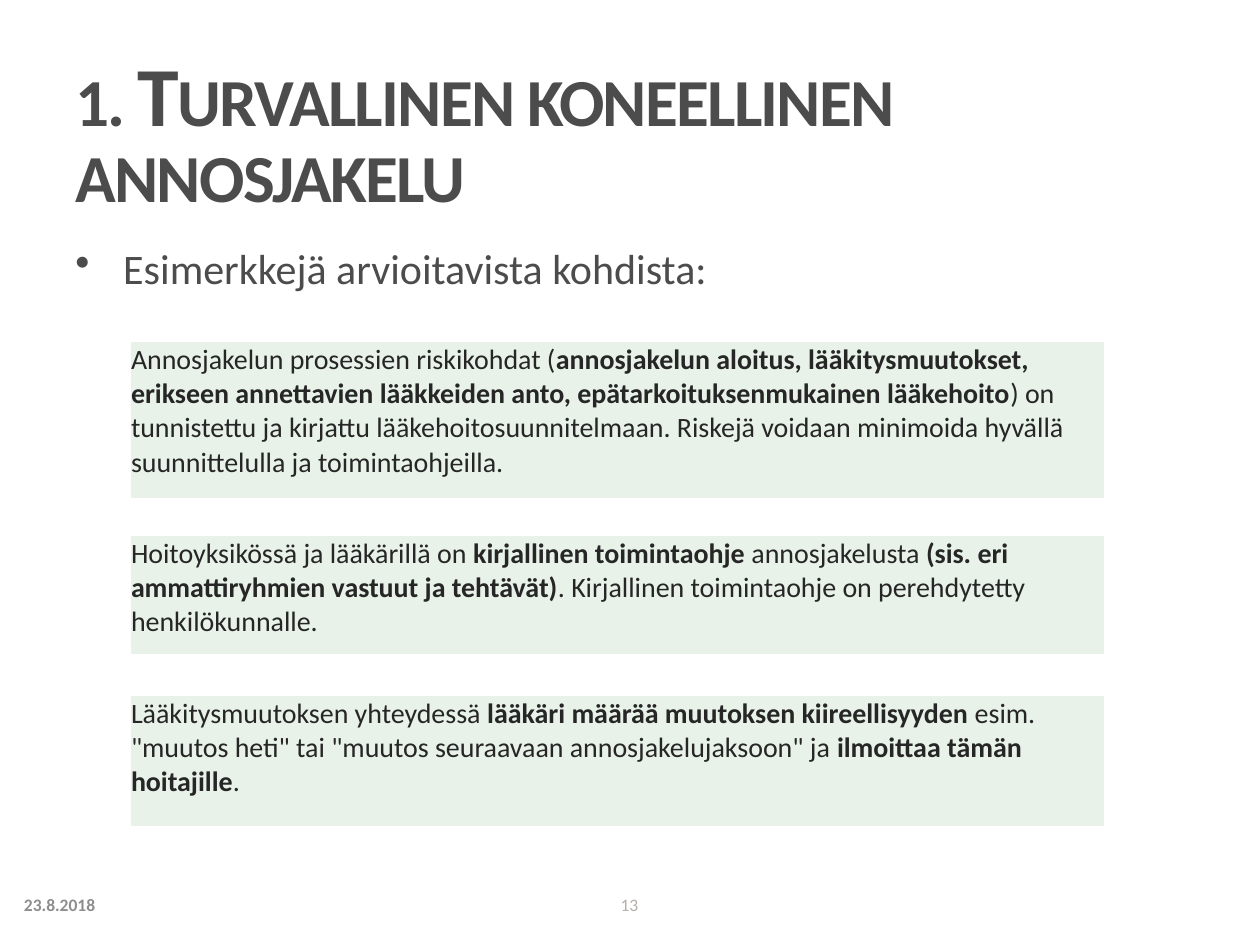
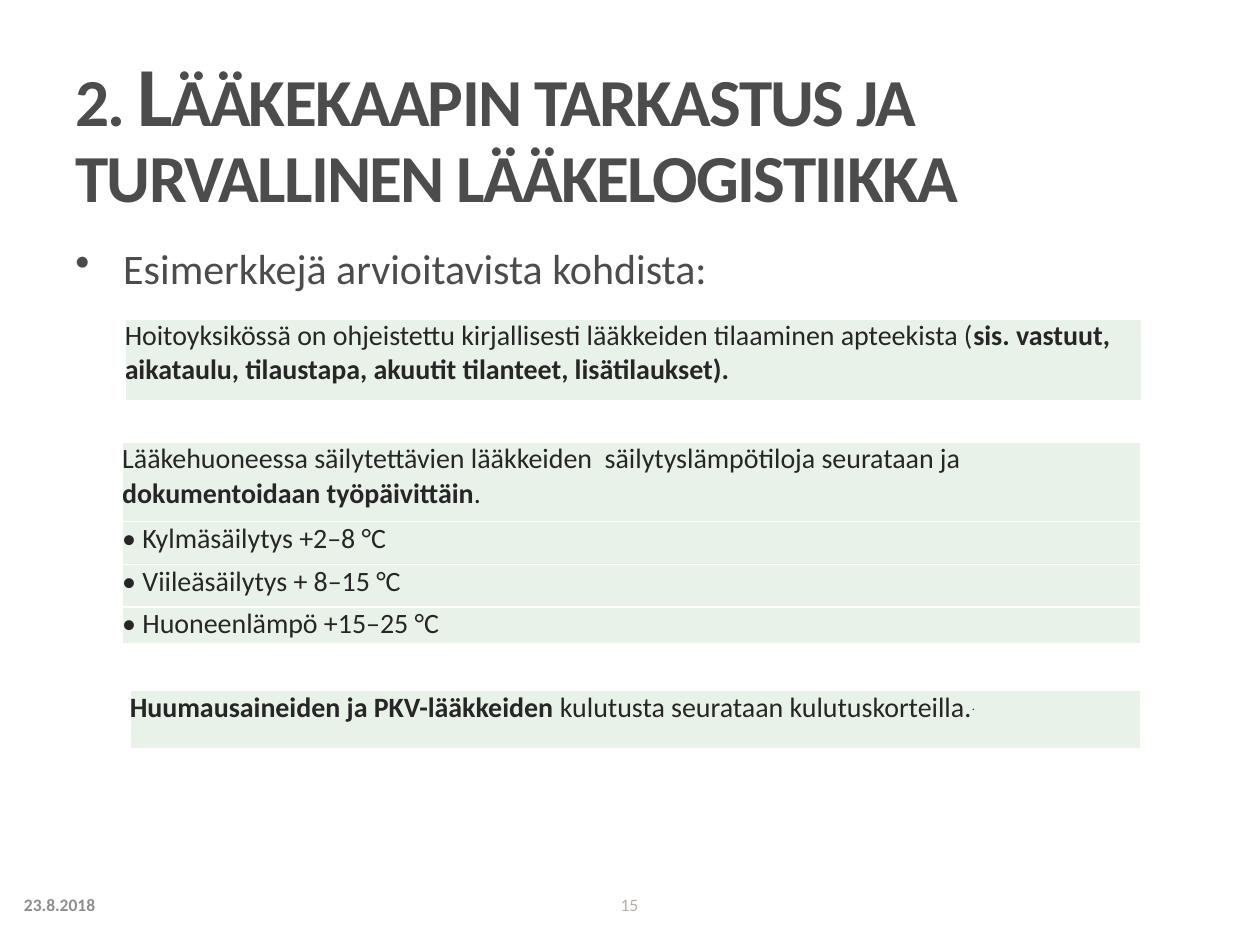
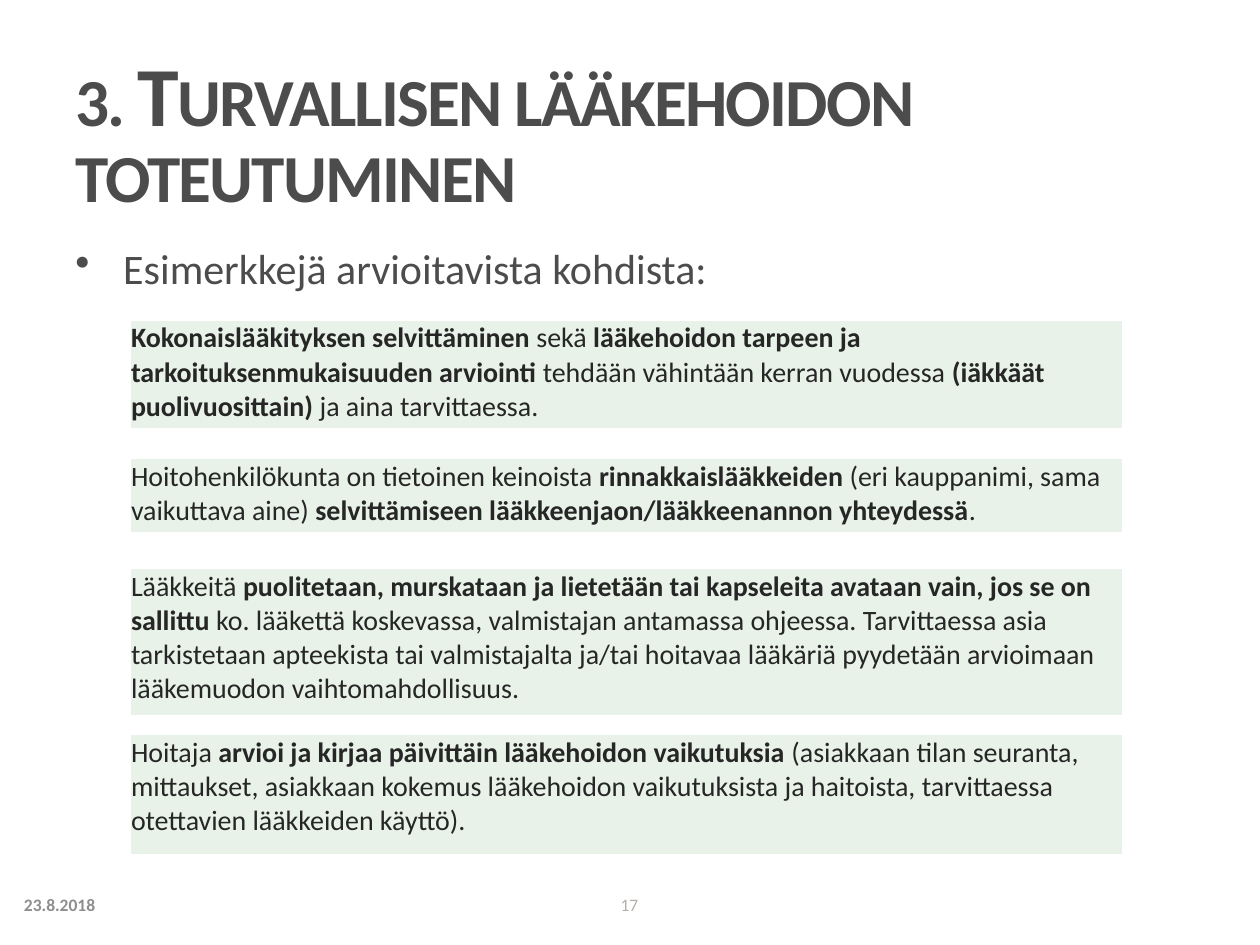
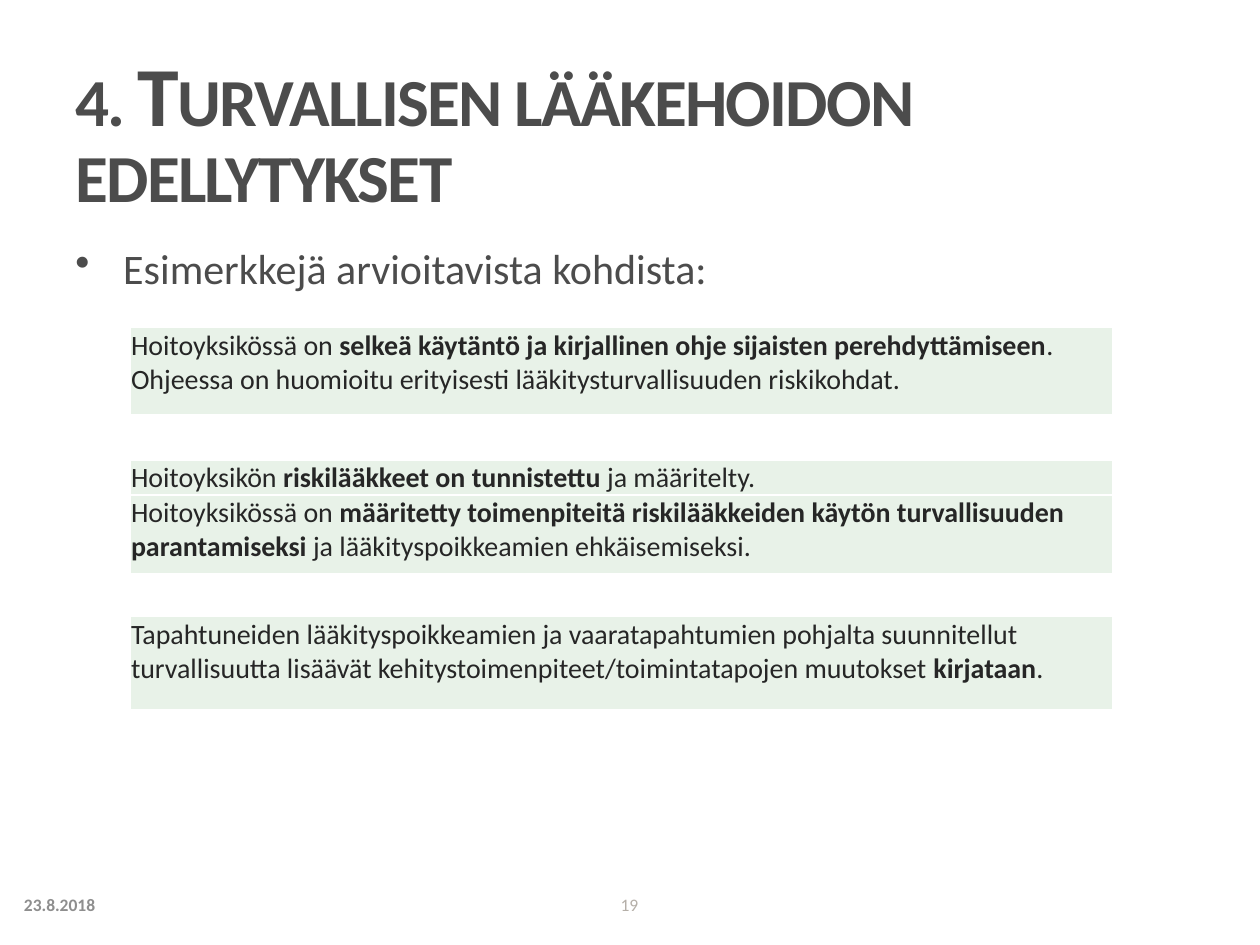
from pptx import Presentation
from pptx.dml.color import RGBColor as RGB
from pptx.enum.text import MSO_ANCHOR as Anchor, PP_ALIGN as Align
from pptx.oxml import parse_xml
from pptx.oxml.ns import nsdecls
from pptx.util import Inches, Pt

FONT = "Calibri"
GREY, INK, MINT, WHITE = "4C4C4C", "262626", "E8F2E8", "FFFFFF"
DATE_INK, PAGE_INK = "8E8E8E", "B5AFA8"
LEAD = "Esimerkkejä arvioitavista kohdista:"
DATE = "23.8.2018"

SLIDES = [
    ("1. Turvallinen koneellinen annosjakelu", 13, 0.01, [
        (1.03, 2.71, 7.74, [
            (1.25, "Annosjakelun prosessien riskikohdat (**annosjakelun aloitus, lääkitysmuutokset, "
                   "erikseen annettavien lääkkeiden anto, epätarkoituksenmukainen lääkehoito**) on "
                   "tunnistettu ja kirjattu lääkehoitosuunnitelmaan. Riskejä voidaan minimoida hyvällä "
                   "suunnittelulla ja toimintaohjeilla.")]),
        (1.03, 4.25, 7.74, [
            (0.95, "Hoitoyksikössä ja lääkärillä on **kirjallinen toimintaohje **annosjakelusta "
                   "**(sis. eri ammattiryhmien vastuut ja tehtävät)**. Kirjallinen toimintaohje on "
                   "perehdytetty henkilökunnalle.")]),
        (1.03, 5.52, 7.74, [
            (1.04, "Lääkitysmuutoksen yhteydessä **lääkäri määrää muutoksen kiireellisyyden **esim. "
                   "\"muutos heti\" tai \"muutos seuraavaan annosjakelujaksoon\" ja "
                   "**ilmoittaa tämän hoitajille**.")]),
    ]),
    ("2. Lääkekaapin tarkastus ja turvallinen lääkelogistiikka", 15, 0, [
        (0.99, 2.53, 8.07, [
            (0.65, "Hoitoyksikössä on ohjeistettu kirjallisesti lääkkeiden tilaaminen apteekista "
                   "(**sis. vastuut, aikataulu, tilaustapa, akuutit tilanteet, lisätilaukset).")]),
        (0.97, 3.51, 8.08, [
            (0.63, "Lääkehuoneessa säilytettävien lääkkeiden  säilytyslämpötiloja seurataan ja "
                   "**dokumentoidaan työpäivittäin**."),
            (0.34, "• Kylmäsäilytys +2–8 °C"),
            (0.34, "• Viileäsäilytys + 8–15 °C"),
            (0.29, "• Huoneenlämpö +15–25 °C")]),
        (1.03, 5.48, 8.02, [
            (0.46, "**Huumausaineiden ja PKV-lääkkeiden **kulutusta seurataan kulutuskorteilla.^.")]),
    ]),
    ("3. Turvallisen lääkehoidon toteutuminen", 17, 0.01, [
        (1.03, 2.54, 7.88, [
            (0.86, "**Kokonaislääkityksen selvittäminen **sekä **lääkehoidon tarpeen ja "
                   "tarkoituksenmukaisuuden arviointi **tehdään vähintään kerran vuodessa "
                   "**(iäkkäät puolivuosittain) **ja aina tarvittaessa.")]),
        (1.03, 3.64, 7.88, [
            (0.59, "Hoitohenkilökunta on tietoinen keinoista **rinnakkaislääkkeiden** (eri kauppanimi, "
                   "sama vaikuttava aine) **selvittämiseen lääkkeenjaon/lääkkeenannon yhteydessä**.")]),
        (1.03, 4.51, 7.88, [
            (1.17, "Lääkkeitä **puolitetaan, murskataan ja lietetään tai kapseleita avataan vain, jos se "
                   "on sallittu **ko. lääkettä koskevassa, valmistajan antamassa ohjeessa. Tarvittaessa "
                   "asia tarkistetaan apteekista tai valmistajalta ja/tai hoitavaa lääkäriä pyydetään "
                   "arvioimaan lääkemuodon vaihtomahdollisuus.")]),
        (1.03, 5.83, 7.88, [
            (0.95, "Hoitaja **arvioi ja kirjaa päivittäin lääkehoidon vaikutuksia **(asiakkaan tilan "
                   "seuranta, mittaukset, asiakkaan kokemus lääkehoidon vaikutuksista ja haitoista, "
                   "tarvittaessa otettavien lääkkeiden käyttö).")]),
    ]),
    ("4. Turvallisen lääkehoidon edellytykset", 19, 0.01, [
        (1.03, 2.6, 7.8, [
            (0.69, "Hoitoyksikössä on **selkeä käytäntö ja kirjallinen ohje sijaisten "
                   "perehdyttämiseen**. Ohjeessa on huomioitu erityisesti lääkitysturvallisuuden "
                   "riskikohdat.")]),
        (1.03, 3.65, 7.8, [
            (0.27, "Hoitoyksikön **riskilääkkeet on tunnistettu **ja määritelty."),
            (0.63, "Hoitoyksikössä on **määritetty toimenpiteitä riskilääkkeiden käytön turvallisuuden "
                   "parantamiseksi** ja lääkityspoikkeamien ehkäisemiseksi.")]),
        (1.03, 4.89, 7.8, [
            (0.74, "Tapahtuneiden lääkityspoikkeamien ja vaaratapahtumien pohjalta suunnitellut "
                   "turvallisuutta lisäävät kehitystoimenpiteet/toimintatapojen muutokset "
                   "**kirjataan**.")]),
    ]),
]


def paint(font, size, ink, bold=None):
    """Set the face, size, colour and weight of a font."""
    font.name, font.size, font.bold = FONT, Pt(size), bold
    font.color.rgb = RGB.from_string(ink)


def add_text(slide, box, text, size, ink, bold=None, anchor=Anchor.MIDDLE, inset=None):
    """Add a wrapped one-paragraph text box and return its paragraph."""
    frame = slide.shapes.add_textbox(*map(Inches, box)).text_frame
    frame.word_wrap, frame.vertical_anchor = True, anchor
    if inset is not None:
        frame.margin_left = frame.margin_right = Inches(inset)
        frame.margin_top = frame.margin_bottom = Inches(inset)
    para = frame.paragraphs[0]
    para.add_run().text = text
    paint(para.font, size, ink, bold)
    return para


def add_title(slide, text):
    """Add the tight small-caps title."""
    para = add_text(slide, (0.5, 0.5, 9, 1.25), text, 48, GREY, True)
    para.line_spacing = 0.75
    props = para.runs[0]._r.get_or_add_rPr()
    props.set("cap", "small")
    props.set("spc", "-100")


def add_lead(slide):
    """Add the bulleted line that leads into the tables."""
    para = add_text(slide, (0.5, 1.95, 9, 4.41), LEAD, 24, GREY, anchor=Anchor.TOP)
    para.line_spacing = 0.8
    props = para._p.get_or_add_pPr()
    props.set("marL", str(Inches(0.38)))
    props.set("indent", str(-Inches(0.38)))
    mark = parse_xml(f'<a:buChar {nsdecls("a")} char="•"/>')
    props.find("{*}defRPr").addprevious(mark)


def add_foot(slide, page):
    """Add the date and the page number."""
    add_text(slide, (0.19, 6.98, 0.84, 0.4), DATE, 10, DATE_INK, True, inset=0)
    add_text(slide, (4.75, 6.98, 0.49, 0.4), str(page), 10, PAGE_INK).alignment = Align.CENTER


def add_edges(cell):
    """Give a cell thin white borders."""
    for side in "LRTB":
        cell._tc.get_or_add_tcPr().append(parse_xml(
            f'<a:ln{side} {nsdecls("a")} w="{Pt(1)}"><a:solidFill>'
            f'<a:srgbClr val="{WHITE}"/></a:solidFill></a:ln{side}>'))


def fill_cell(cell, text, inset):
    """Style a cell; ** toggles bold and ^ starts a small raised tail."""
    cell.margin_left = cell.margin_right = cell.margin_top = Inches(inset)
    cell.margin_bottom = 0
    add_edges(cell)
    cell.fill.solid()
    cell.fill.fore_color.rgb = RGB.from_string(MINT)
    para = cell.text_frame.paragraphs[0]
    paint(para.font, 16, INK)
    main_text, _, tail = text.partition("^")
    for i, part in enumerate(main_text.split("**")):
        if part:
            run = para.add_run()
            run.text, run.font.bold = part, i % 2 == 1
    if tail:
        run = para.add_run()
        run.text, run.font.size = tail, Pt(12)
        run._r.get_or_add_rPr().set("baseline", "30000")


def add_panel(slide, left, top, width, rows, inset):
    """Add a one-column table of green rows."""
    high = sum(row[0] for row in rows)
    box = map(Inches, (left, top, width, high))
    table = slide.shapes.add_table(len(rows), 1, *box).table
    table.first_row = table.horz_banding = False
    for i, (tall, text) in enumerate(rows):
        table.rows[i].height = Inches(tall)
        fill_cell(table.cell(i, 0), text, inset)


def main():
    """Build the four slides and save them."""
    deck = Presentation()
    deck.slide_width, deck.slide_height = Inches(10), Inches(7.5)
    for title, page, inset, panels in SLIDES:
        slide = deck.slides.add_slide(deck.slide_layouts[6])
        add_title(slide, title)
        add_lead(slide)
        add_foot(slide, page)
        for panel in panels:
            add_panel(slide, *panel, inset)
    deck.save("out.pptx")


if __name__ == "__main__":
    main()
